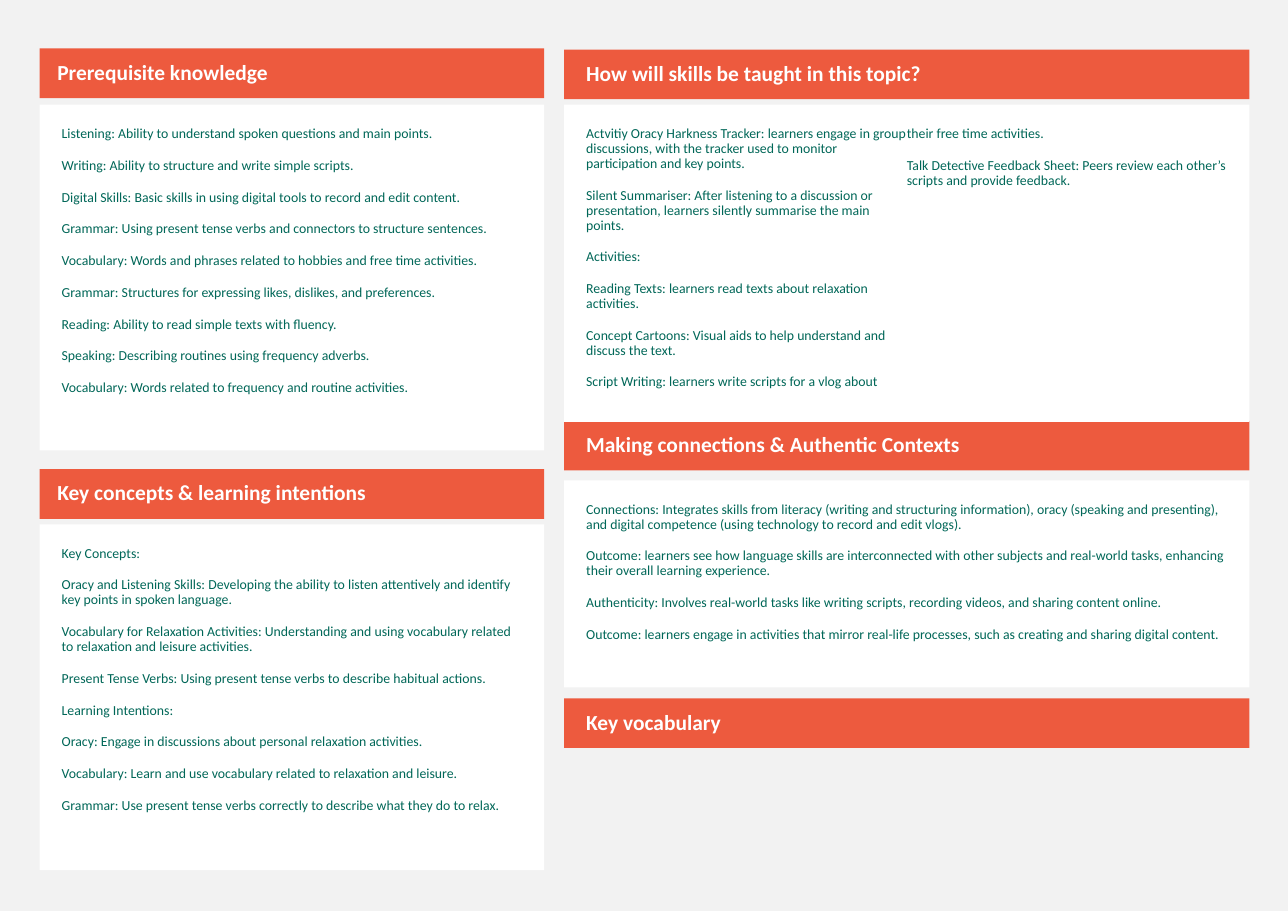
from pptx import Presentation
from pptx.dml.color import RGBColor
from pptx.enum.shapes import MSO_SHAPE as Shape
from pptx.enum.text import MSO_ANCHOR as Anchor, PP_ALIGN as Align
from pptx.util import Inches, Pt

GREY = RGBColor(0xF2, 0xF2, 0xF2)
ORANGE = RGBColor(0xED, 0x5A, 0x3E)
WHITE = RGBColor(0xFF, 0xFF, 0xFF)
GREEN = RGBColor(0x00, 0x67, 0x58)

# Grid in inches: left edge, width and heading indent of each column
LEFT = (0.36, 4.58, 0.16)
RIGHT = (5.12, 6.22, 0.2)
HEADING_HEIGHT = 0.45
PADDING = (0.2, 0.2, 0.2, 0.2)

# Headings: column, top, title
headings = [
    (LEFT, 0.44, "Prerequisite knowledge"),
    (LEFT, 4.26, "Key concepts & learning intentions"),
    (RIGHT, 0.45, "How will skills be taught in this topic?"),
    (RIGHT, 3.82, "Making connections & Authentic Contexts"),
    (RIGHT, 6.34, "Key vocabulary"),
]

# Panels: column, top, height, text columns, paragraphs
panels = [
    (LEFT, 0.95, 3.14, 1, [
        "Listening: Ability to understand spoken questions and main points.",
        "Writing: Ability to structure and write simple scripts.",
        "Digital Skills: Basic skills in using digital tools to record and edit content.",
        "Grammar: Using present tense verbs and connectors to structure sentences.",
        "Vocabulary: Words and phrases related to hobbies and free time activities.",
        "Grammar: Structures for expressing likes, dislikes, and preferences.",
        "Reading: Ability to read simple texts with fluency.",
        "Speaking: Describing routines using frequency adverbs.",
        "Vocabulary: Words related to frequency and routine activities.",
    ]),
    (LEFT, 4.76, 3.14, 1, [
        "Key Concepts:",
        "Oracy and Listening Skills: Developing the ability to listen attentively "
        "and identify key points in spoken language.",
        "Vocabulary for Relaxation Activities: Understanding and using vocabulary "
        "related to relaxation and leisure activities.",
        "Present Tense Verbs: Using present tense verbs to describe habitual actions.",
        "Learning Intentions:",
        "Oracy: Engage in discussions about personal relaxation activities.",
        "Vocabulary: Learn and use vocabulary related to relaxation and leisure.",
        "Grammar: Use present tense verbs correctly to describe what they do to relax.",
    ]),
    (RIGHT, 0.95, 2.88, 2, [
        "Actvitiy Oracy Harkness Tracker: learners engage in group discussions, "
        "with the tracker used to monitor participation and key points.",
        "Silent Summariser: After listening to a discussion or presentation, "
        "learners silently summarise the main points.",
        "Activities:",
        "Reading Texts: learners read texts about relaxation activities.",
        "Concept Cartoons: Visual aids to help understand and discuss the text.",
        "Script Writing: learners write scripts for a vlog about their free time activities.",
        "Talk Detective Feedback Sheet: Peers review each other’s scripts and provide feedback.",
    ]),
    (RIGHT, 4.36, 1.88, 1, [
        "Connections: Integrates skills from literacy (writing and structuring information), "
        "oracy (speaking and presenting), and digital competence "
        "(using technology to record and edit vlogs).",
        "Outcome: learners see how language skills are interconnected with other subjects "
        "and real-world tasks, enhancing their overall learning experience.",
        "Authenticity: Involves real-world tasks like writing scripts, recording videos, "
        "and sharing content online.",
        "Outcome: learners engage in activities that mirror real-life processes, "
        "such as creating and sharing digital content.",
    ]),
]

deck = Presentation()
deck.slide_width, deck.slide_height = Inches(11.69), Inches(8.27)
page = deck.slides.add_slide(deck.slide_layouts[6])
page.background.fill.solid()
page.background.fill.fore_color.rgb = GREY


def add_block(column, top, height, fill, insets, lines, size, color, bold=False):
    left, width, _ = column
    box = page.shapes.add_shape(Shape.RECTANGLE, *map(Inches, (left, top, width, height)))
    box.shadow.inherit = False
    box.fill.solid()
    box.fill.fore_color.rgb = fill
    box.line.fill.background()
    frame = box.text_frame
    frame.word_wrap = True
    frame.vertical_anchor = Anchor.TOP
    (frame.margin_left, frame.margin_top,
     frame.margin_right, frame.margin_bottom) = map(Inches, insets)
    frame.text = "\n".join(lines)
    for para in frame.paragraphs:
        para.alignment = Align.LEFT
        para.line_spacing = 0.9
        para.space_before = Pt(11)
        for span in para.runs:
            span.font.name = "Calibri"
            span.font.size = Pt(size)
            span.font.bold = bold
            span.font.color.rgb = color
    return box


# Orange heading bars
for column, top, title in headings:
    bar = add_block(column, top, HEADING_HEIGHT, ORANGE, (column[2], 0.05, 0.1, 0.05),
                    [title], 14, WHITE, bold=True)
    bar.text_frame.vertical_anchor = Anchor.MIDDLE

# White text panels
for column, top, height, text_columns, lines in panels:
    panel = add_block(column, top, height, WHITE, PADDING, lines, 9, GREEN)
    if text_columns > 1:
        panel.element.txBody.bodyPr.set("numCol", str(text_columns))

deck.save("out.pptx")
